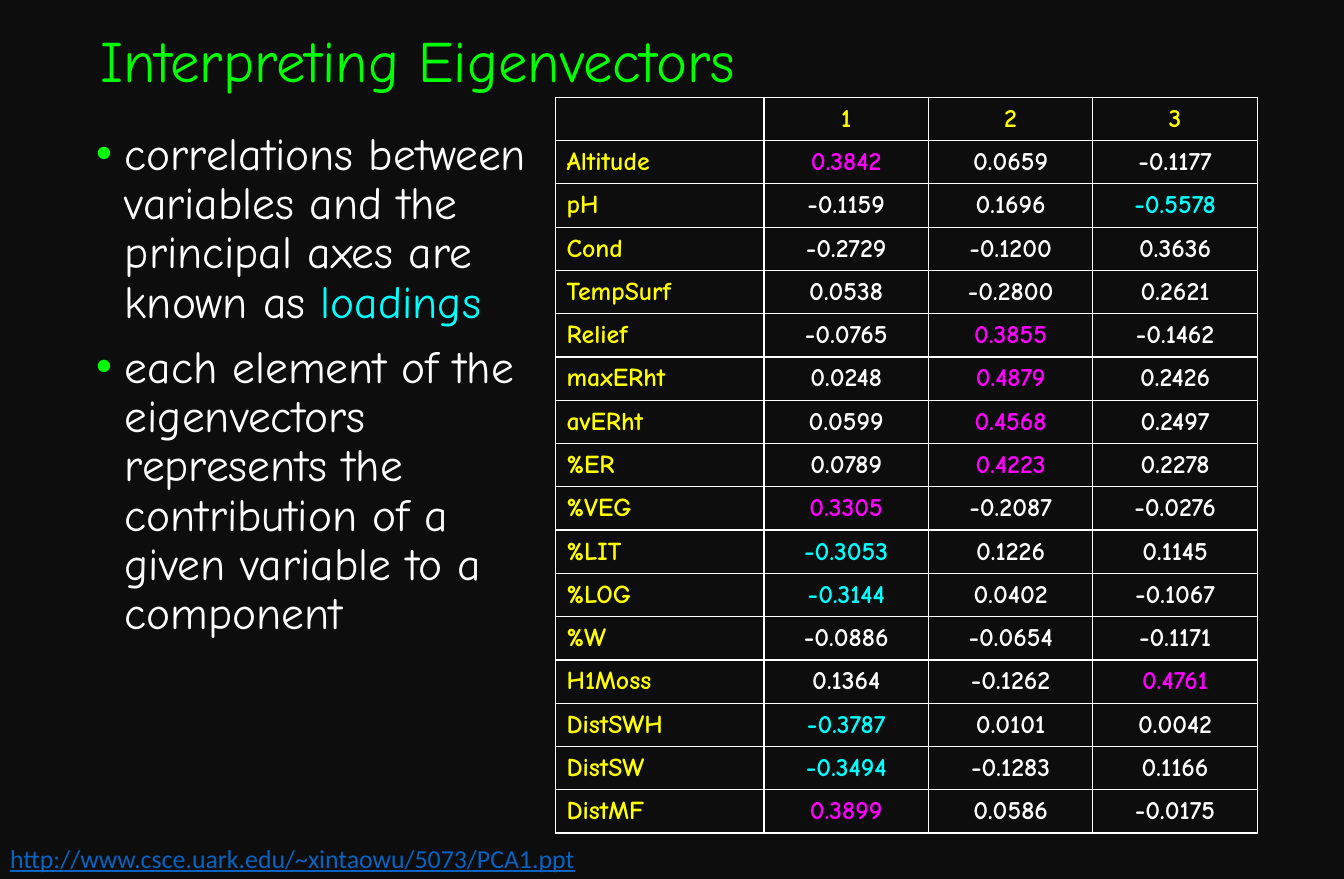
"""Build the slide on interpreting eigenvectors, with its table of loadings."""
from dataclasses import dataclass

from lxml import etree
from pptx import Presentation
from pptx.dml.color import RGBColor
from pptx.enum.text import MSO_ANCHOR, PP_ALIGN
from pptx.oxml.ns import qn
from pptx.table import _Cell
from pptx.text.text import TextFrame, _Paragraph
from pptx.util import Cm, Pt

LEFT, CENTER = PP_ALIGN.LEFT, PP_ALIGN.CENTER
TOP, MIDDLE = MSO_ANCHOR.TOP, MSO_ANCHOR.MIDDLE

BACKGROUND, WHITE, GREEN = "0D0D0D", "FFFFFF", "00FF00"
YELLOW, MAGENTA, CYAN, LINK_BLUE = "FFFF00", "FF00FF", "00FFFF", "0563C1"
HAND_FONT, LINK_FONT = "Comic Neue", "Calibri"

COLUMN_WIDTHS = (5.13, 4.04, 4.04, 4.04)
ROW_HEIGHT = 1.05
HIGH_LIMITS = (0.33, 0.38, 0.47)
LOW_LIMIT = -0.3
BULLET_INDENT = 0.71


@dataclass(frozen=True)
class Box:
    left: float
    top: float
    width: float
    height: float


@dataclass(frozen=True)
class Loading:
    variable: str
    values: tuple[str, str, str]


TITLE_BOX = Box(2.21, -0.13, 28.22, 3.4)
BODY_BOX = Box(2.11, 3.1, 11.35, 18.49)
TABLE_BOX = Box(13.64, 2.39, 17.25, 17.93)
LINK_BOX = Box(0, 20.57, 16.51, 1.02)

BULLETS = (
    (("correlations between variables and the principal axes are known as ", WHITE),
     ("loadings", CYAN)),
    (("each element of the eigenvectors represents the contribution of a given "
      "variable to a component", WHITE),),
)

LOADINGS = (
    Loading("Altitude", ("0.3842", "0.0659", "-0.1177")),
    Loading("pH", ("-0.1159", "0.1696", "-0.5578")),
    Loading("Cond", ("-0.2729", "-0.1200", "0.3636")),
    Loading("TempSurf", ("0.0538", "-0.2800", "0.2621")),
    Loading("Relief", ("-0.0765", "0.3855", "-0.1462")),
    Loading("maxERht", ("0.0248", "0.4879", "0.2426")),
    Loading("avERht", ("0.0599", "0.4568", "0.2497")),
    Loading("%ER", ("0.0789", "0.4223", "0.2278")),
    Loading("%VEG", ("0.3305", "-0.2087", "-0.0276")),
    Loading("%LIT", ("-0.3053", "0.1226", "0.1145")),
    Loading("%LOG", ("-0.3144", "0.0402", "-0.1067")),
    Loading("%W", ("-0.0886", "-0.0654", "-0.1171")),
    Loading("H1Moss", ("0.1364", "-0.1262", "0.4761")),
    Loading("DistSWH", ("-0.3787", "0.0101", "0.0042")),
    Loading("DistSW", ("-0.3494", "-0.1283", "0.1166")),
    Loading("DistMF", ("0.3899", "0.0586", "-0.0175")),
)


def to_color(value: str) -> RGBColor:
    """Turn a hex string into a colour."""
    return RGBColor.from_string(value)


def place(box: Box) -> tuple[Cm, Cm, Cm, Cm]:
    """Return the lengths of a box."""
    return Cm(box.left), Cm(box.top), Cm(box.width), Cm(box.height)


def add_text(paragraph: _Paragraph, text: str, *, size: float = 18, color: str = WHITE,
             font: str = HAND_FONT, bold: bool = False, underline: bool = False,
             align: PP_ALIGN = LEFT) -> None:
    """Add a formatted run to a paragraph."""
    paragraph.alignment = align
    run = paragraph.add_run()
    run.text = text
    run.font.size = Pt(size)
    run.font.name = font
    run.font.bold = bold
    run.font.underline = underline
    run.font.color.rgb = to_color(color)


def add_text_frame(slide, box: Box, anchor: MSO_ANCHOR = TOP) -> TextFrame:
    """Add a wrapping text box and return its frame."""
    frame = slide.shapes.add_textbox(*place(box)).text_frame
    frame.word_wrap = True
    frame.vertical_anchor = anchor
    return frame


def set_bullet(paragraph: _Paragraph) -> None:
    """Give a paragraph a hanging green bullet."""
    properties = paragraph._p.get_or_add_pPr()
    properties.set("marL", str(Cm(BULLET_INDENT)))
    properties.set("indent", str(-Cm(BULLET_INDENT)))
    bullet_color = etree.SubElement(properties, qn("a:buClr"))
    etree.SubElement(bullet_color, qn("a:srgbClr"), val=GREEN)
    etree.SubElement(properties, qn("a:buFont"), typeface="Arial")
    etree.SubElement(properties, qn("a:buChar"), char="•")


def add_bullets(slide) -> None:
    """Add the bulleted explanation."""
    frame = add_text_frame(slide, BODY_BOX)
    for index, parts in enumerate(BULLETS):
        paragraph = frame.add_paragraph() if index else frame.paragraphs[0]
        paragraph.line_spacing = 0.9
        paragraph.space_before = Pt(11.3)
        set_bullet(paragraph)
        for text, color in parts:
            add_text(paragraph, text, size=31.7, color=color)


def set_borders(cell: _Cell) -> None:
    """Draw a thin white line on each side of a cell."""
    properties = cell._tc.get_or_add_tcPr()
    for side in ("a:lnL", "a:lnR", "a:lnT", "a:lnB"):
        line = etree.SubElement(properties, qn(side), w=str(Pt(1)))
        fill = etree.SubElement(line, qn("a:solidFill"))
        etree.SubElement(fill, qn("a:srgbClr"), val=WHITE)


def fill_cell(cell: _Cell, text: str, color: str, align: PP_ALIGN) -> None:
    """Format a table cell and write its text."""
    set_borders(cell)
    cell.fill.background()
    cell.vertical_anchor = MIDDLE
    if text:
        cell.margin_left = cell.margin_right = Cm(0.28)
        cell.margin_top = cell.margin_bottom = Cm(0.15)
        add_text(cell.text_frame.paragraphs[0], text, color=color, bold=True, align=align)


def loading_color(value: str, high_limit: float) -> str:
    """Choose the colour that marks a strong loading."""
    number = float(value)
    if number >= high_limit:
        return MAGENTA
    return CYAN if number <= LOW_LIMIT else WHITE


def add_loadings_table(slide) -> None:
    """Add the table of loadings on three components."""
    table = slide.shapes.add_table(
        len(LOADINGS) + 1, len(COLUMN_WIDTHS), *place(TABLE_BOX)).table
    table.first_row = table.horz_banding = False
    for column, width in zip(table.columns, COLUMN_WIDTHS):
        column.width = Cm(width)
    for row in table.rows:
        row.height = Cm(ROW_HEIGHT)
    for column_index, heading in enumerate(("", "1", "2", "3")):
        fill_cell(table.cell(0, column_index), heading, YELLOW, CENTER)
    for row_index, loading in enumerate(LOADINGS, start=1):
        fill_cell(table.cell(row_index, 0), loading.variable, YELLOW, LEFT)
        for column_index, (value, limit) in enumerate(zip(loading.values, HIGH_LIMITS), start=1):
            fill_cell(table.cell(row_index, column_index), value,
                      loading_color(value, limit), CENTER)


def main() -> None:
    """Build and save the presentation."""
    presentation = Presentation()
    presentation.slide_width, presentation.slide_height = Cm(33.02), Cm(21.59)
    slide = presentation.slides.add_slide(presentation.slide_layouts[6])
    slide.background.fill.solid()
    slide.background.fill.fore_color.rgb = to_color(BACKGROUND)

    title = add_text_frame(slide, TITLE_BOX, MIDDLE).paragraphs[0]
    title.line_spacing = 0.9
    add_text(title, "Interpreting Eigenvectors", size=40.8, color=GREEN)
    add_bullets(slide)
    add_loadings_table(slide)
    add_text(add_text_frame(slide, LINK_BOX).paragraphs[0],
             "http://www.csce.uark.edu/~xintaowu/5073/PCA1.ppt",
             color=LINK_BLUE, font=LINK_FONT, underline=True)
    presentation.save("out.pptx")


if __name__ == "__main__":
    main()
